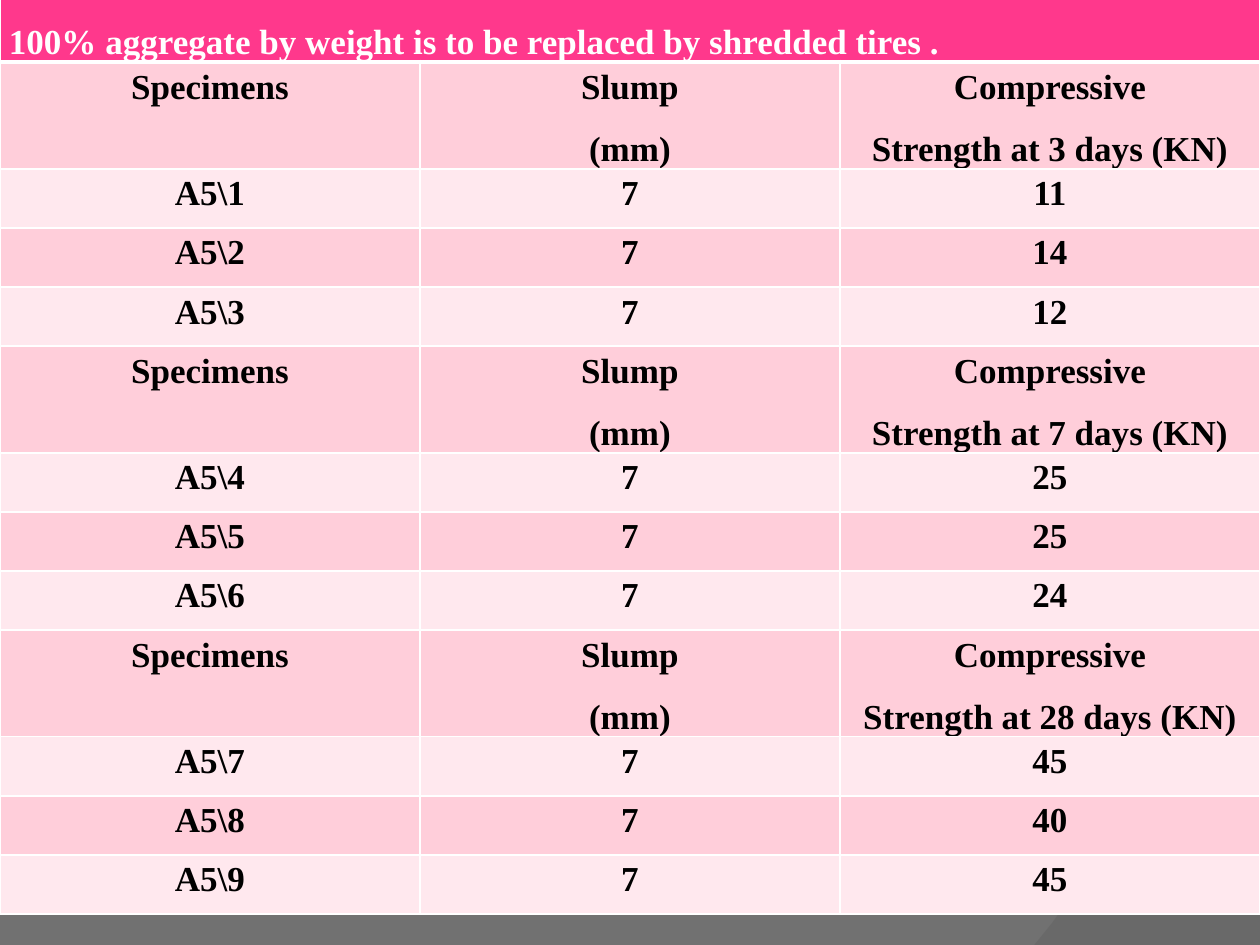
from lxml.etree import SubElement
from pptx import Presentation
from pptx.dml.color import RGBColor
from pptx.enum.text import MSO_ANCHOR as Anchor, PP_ALIGN as Align
from pptx.oxml.ns import qn
from pptx.util import Cm, Pt

BACKGROUND = RGBColor(0x66, 0x66, 0x66)
WAVE_GREY = RGBColor(0x7F, 0x7F, 0x7F)
EDGE_GREY = RGBColor(0x5E, 0x5E, 0x5E)
HEADER_PINK = RGBColor(0xFF, 0x38, 0x8C)
DARK_BAND = RGBColor(0xFF, 0xCE, 0xDA)
LIGHT_BAND = RGBColor(0xFF, 0xE8, 0xEE)
WHITE = RGBColor(0xFF, 0xFF, 0xFF)
BLACK = RGBColor(0, 0, 0)

TITLE = "100% aggregate by weight is to be replaced by shredded tires ."
SLUMP = "7"
STRENGTHS = {3: (11, 14, 12), 7: (25, 25, 24), 28: (45, 40, 45)}
CURVE_STEPS = 24


def curve_points(start, control_1, control_2, end):
    points = []
    for step in range(CURVE_STEPS + 1):
        t = step / CURVE_STEPS
        weights = ((1 - t) ** 3, 3 * t * (1 - t) ** 2, 3 * t ** 2 * (1 - t), t ** 3)
        points.append(tuple(
            sum(weight * value for weight, value in zip(weights, values))
            for values in zip(start, control_1, control_2, end)))
    return points


def add_outline(slide, left, top, points, color, opacity):
    corners = [(left + Cm(x), top + Cm(y)) for x, y in points]
    builder = slide.shapes.build_freeform(*corners[0])
    builder.add_line_segments(corners[1:], close=True)
    shape = builder.convert_to_shape()
    shape.shadow.inherit = False
    shape.line.fill.background()
    shape.fill.solid()
    shape.fill.fore_color.rgb = color
    color_element = shape.fill._xPr.find(qn("a:solidFill"))[0]
    SubElement(color_element, qn("a:alpha"), val=str(opacity * 1000))


def add_backdrop(slide, left, top):
    slide.background.fill.solid()
    slide.background.fill.fore_color.rgb = BACKGROUND
    wave = curve_points((25.4, 13.2), (14.2, 18.52), (9.93, 18.26), (0, 17.91))
    add_outline(slide, left, top, wave + [(0, 19.05), (25.4, 19.05)], WAVE_GREY, 45)
    edge = curve_points((20.85, 19.05), (23.75, 15.72), (25.86, 7.62), (20.32, 0))
    add_outline(slide, left, top, edge + [(25.4, 0.05), (25.4, 19.05)], EDGE_GREY, 40)


def write_text(frame, text, color=BLACK, align=Align.CENTER, size=20):
    frame.text = text
    for paragraph in frame.paragraphs:
        paragraph.alignment = align
        paragraph.line_spacing = 1.15
        paragraph.space_after = Pt(10)
        font = paragraph.font
        for target in (font, *(run.font for run in paragraph.runs)):
            target.name = "Times New Roman"
            target.size = Pt(size)
            target.bold = True
            target.color.rgb = color


def format_cell(cell, fill, bottom_width=1):
    properties = cell._tc.get_or_add_tcPr()
    for side in "LRTB":
        width = Pt(bottom_width if side == "B" else 1)
        line = SubElement(properties, qn(f"a:ln{side}"), w=str(width))
        solid = SubElement(line, qn("a:solidFill"))
        SubElement(solid, qn("a:srgbClr"), val=str(WHITE))
    cell.fill.solid()
    cell.fill.fore_color.rgb = fill
    cell.margin_left = cell.margin_right = Cm(0.18)
    cell.margin_top = cell.margin_bottom = 0


def result_rows():
    specimen = 1
    rows = []
    for days, strengths in STRENGTHS.items():
        rows.append(("Specimens", "Slump\n(mm)", f"Compressive\nStrength at {days} days (KN)"))
        for strength in strengths:
            rows.append((f"A5\\{specimen}", SLUMP, str(strength)))
            specimen += 1
    return rows


def add_results_table(slide, left, top, width, height):
    rows = result_rows()
    table = slide.shapes.add_table(len(rows) + 1, 3, left, top, width, height).table
    for column in table.columns:
        column.width = width // 3

    table.rows[0].height = Cm(2.14)
    for cell in table.rows[0].cells:
        format_cell(cell, HEADER_PINK, bottom_width=3)
    header = table.cell(0, 0)
    header.merge(table.cell(0, 2))
    header.vertical_anchor = Anchor.BOTTOM
    write_text(header.text_frame, TITLE, color=WHITE, align=Align.LEFT)

    for index, texts in enumerate(rows, start=1):
        table.rows[index].height = Cm(2.1 if "\n" in texts[1] else 1.19)
        band = DARK_BAND if index % 2 else LIGHT_BAND
        for cell, text in zip(table.rows[index].cells, texts):
            format_cell(cell, band)
            write_text(cell.text_frame, text)


def main():
    presentation = Presentation()
    presentation.slide_width = Cm(25.4)
    presentation.slide_height = Cm(19.05)
    slide = presentation.slides.add_slide(presentation.slide_layouts[6])
    add_backdrop(slide, 0, 0)
    add_results_table(slide, 0, Cm(-0.89), Cm(25.4), Cm(19.94))
    presentation.save("out.pptx")


if __name__ == "__main__":
    main()
